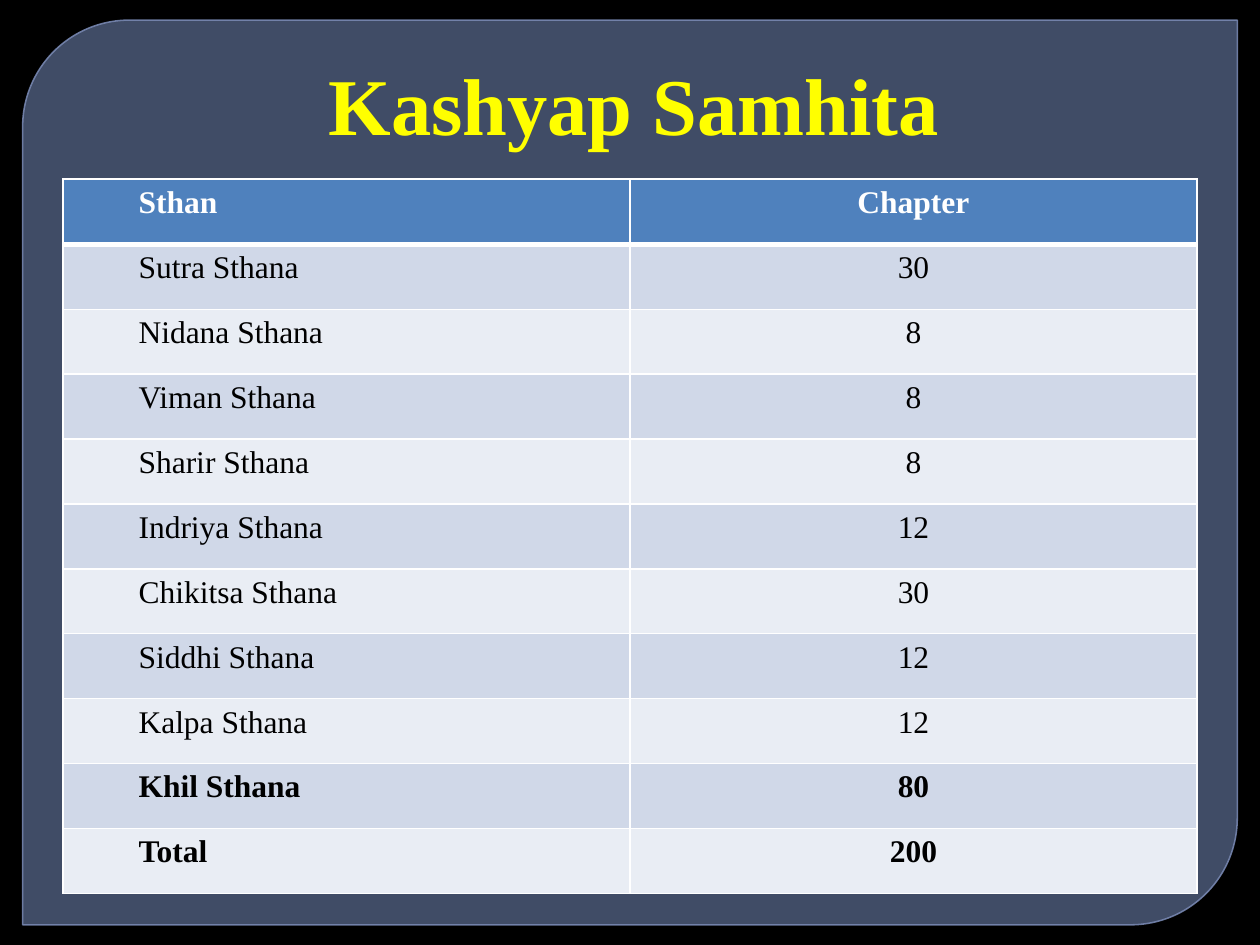
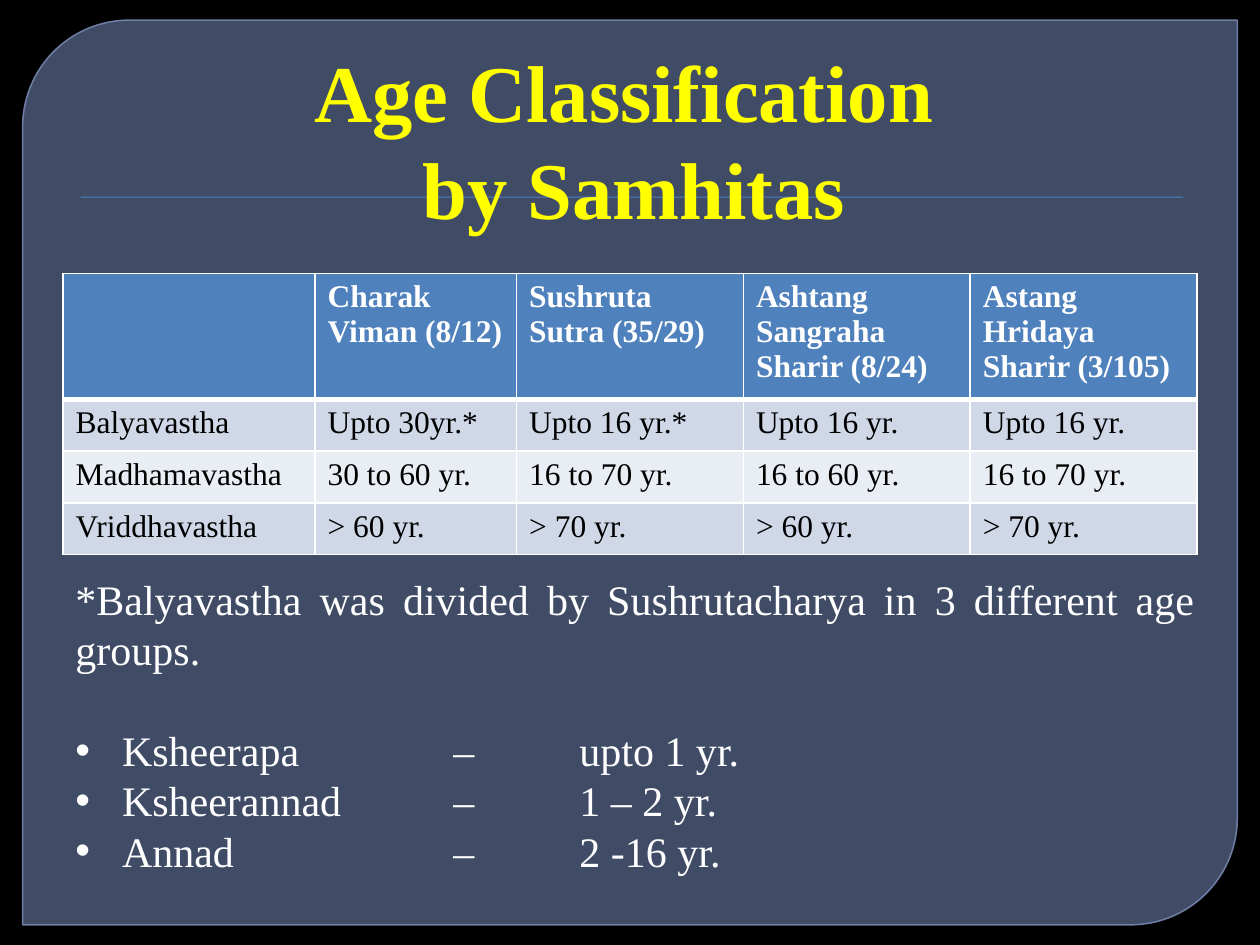
from lxml import etree
from pptx import Presentation
from pptx.dml.color import RGBColor
from pptx.enum.shapes import MSO_SHAPE
from pptx.enum.text import MSO_ANCHOR, PP_ALIGN
from pptx.oxml.ns import qn
from pptx.util import Inches, Pt

CENTER, LEFT, JUSTIFY = PP_ALIGN.CENTER, PP_ALIGN.LEFT, PP_ALIGN.JUSTIFY
TOP, BOTTOM = MSO_ANCHOR.TOP, MSO_ANCHOR.BOTTOM
PANEL_SHAPE, RULE_SHAPE = MSO_SHAPE.ROUND_2_DIAG_RECTANGLE, MSO_SHAPE.RECTANGLE

COLORS = {
    "background": "000000", "panel": "63759D", "panel_line": "7989B3",
    "accent": "4F81BD", "title": "FFFF00", "light": "FFFFFF", "dark": "000000",
    "odd_row": "D0D8E8", "even_row": "E9EDF4",
}
FONT = "Times New Roman"
TITLE_FONT = {"name": FONT, "size": Pt(46), "bold": True}
NOTE_FONT = {"name": FONT, "size": Pt(24), "bold": False}
MARGIN, CONTENT_WIDTH = 0.5, 9

CHAPTERS = {
    "title": "Kashyap Samhita", "title_height": 0.97,
    "top": 1.42, "columns": [4.5, 4.5], "header_height": 0.52, "row_height": 0.515,
    "alignments": [LEFT, CENTER], "first_indent": 0.5, "bold_rows": 2,
    "rows": [
        ("Sthan", "Chapter"),
        ("Sutra Sthana", "30"),
        ("Nidana Sthana", "8"),
        ("Viman Sthana", "8"),
        ("Sharir Sthana", "8"),
        ("Indriya Sthana", "12"),
        ("Chikitsa Sthana", "30"),
        ("Siddhi Sthana", "12"),
        ("Kalpa Sthana", "12"),
        ("Khil Sthana", "80"),
        ("Total", "200"),
    ],
}
AGES = {
    "title": "Age Classification \vby Samhitas", "title_height": 1.64,
    "top": 2.17, "columns": [2, 1.6, 1.8, 1.8, 1.8],
    "header_height": 0.93, "row_height": 0.41,
    "alignments": [LEFT] * 5, "first_indent": 0, "bold_rows": 0,
    "rows": [
        ("", "Charak Viman (8/12)", "Sushruta Sutra (35/29)",
         "Ashtang Sangraha Sharir (8/24)", "Astang Hridaya Sharir (3/105)"),
        ("Balyavastha", "Upto 30yr.*", "Upto 16 yr.*", "Upto 16 yr.", "Upto 16 yr."),
        ("Madhamavastha", "30 to 60 yr.", "16 to 70 yr.", "16 to 60 yr.", "16 to 70 yr."),
        ("Vriddhavastha", "> 60 yr.", "> 70 yr.", "> 60 yr.", "> 70 yr."),
    ],
}
NOTE = "*Balyavastha was divided by Sushrutacharya in 3 different age groups."
AGE_GROUPS = [
    ("Ksheerapa", "–", "upto 1 yr."),
    ("Ksheerannad", "–", "1 – 2 yr."),
    ("Annad", "–", "2 -16 yr."),
]
GROUP_TABS, GROUP_INDENT = [3, 4], 0.37


def rgb(name):
    return RGBColor.from_string(COLORS[name])


def fill_with(target, color):
    target.fill.solid()
    target.fill.fore_color.rgb = rgb(color)


def add_xml(parent, tag, **attributes):
    values = {key: str(value) for key, value in attributes.items()}
    return etree.SubElement(parent, qn(tag), values)


def set_opacity(properties, percent):
    color = properties.find(qn("a:solidFill")).find(qn("a:srgbClr"))
    add_xml(color, "a:alpha", val=percent * 1000)


def format_paragraph(paragraph, font, color, alignment, indent=0):
    paragraph.alignment = alignment
    if indent:
        paragraph._p.get_or_add_pPr().set("marL", str(Inches(indent)))
    for run in paragraph.runs:
        for attribute, value in font.items():
            setattr(run.font, attribute, value)
        run.font.color.rgb = rgb(color)


def add_text_frame(slide, top, width, height, anchor):
    box = slide.shapes.add_textbox(
        Inches(MARGIN), Inches(top), Inches(width), Inches(height))
    frame = box.text_frame
    frame.word_wrap = True
    frame.vertical_anchor = anchor
    return frame


def add_base_slide(presentation, content):
    """Add a slide with the dark panel, the rule, the title and the table."""
    slide = presentation.slides.add_slide(presentation.slide_layouts[6])
    fill_with(slide.background, "background")

    panel = slide.shapes.add_shape(
        PANEL_SHAPE, Inches(0.18), Inches(0.16), Inches(9.64), Inches(7.18))
    panel.adjustments[0], panel.adjustments[1] = 0.118, 0
    panel.shadow.inherit = False
    fill_with(panel, "panel")
    panel.line.color.rgb = rgb("panel_line")
    panel.line.width = Pt(0.87)
    set_opacity(panel._element.spPr, 65)
    set_opacity(panel.line._get_or_add_ln(), 88)

    rule = slide.shapes.add_shape(
        RULE_SHAPE, Inches(0.64), Inches(1.56), Inches(8.75), Inches(0.01))
    rule.shadow.inherit = False
    fill_with(rule, "accent")
    rule.line.fill.background()

    frame = add_text_frame(slide, 0.28, CONTENT_WIDTH, content["title_height"], BOTTOM)
    frame.text = content["title"]
    format_paragraph(frame.paragraphs[0], TITLE_FONT, "title", CENTER, 0.06)
    add_grid(slide, content)
    return slide


def set_borders(cell, row_index):
    header_edge = {0: "a:lnB", 1: "a:lnT"}.get(row_index)
    properties = cell._tc.get_or_add_tcPr()
    for position, side in enumerate(("a:lnL", "a:lnR", "a:lnT", "a:lnB")):
        border = etree.Element(qn(side), w=str(Pt(3 if side == header_edge else 1)))
        add_xml(add_xml(border, "a:solidFill"), "a:srgbClr", val=COLORS["light"])
        properties.insert(position, border)


def add_grid(slide, content):
    rows, columns = content["rows"], content["columns"]
    heights = [content["header_height"]] + [content["row_height"]] * (len(rows) - 1)
    table = slide.shapes.add_table(
        len(rows), len(columns), Inches(MARGIN), Inches(content["top"]),
        Inches(CONTENT_WIDTH), Inches(sum(heights))).table
    for column, width in zip(table.columns, columns):
        column.width = Inches(width)
    for row_index, (values, height) in enumerate(zip(rows, heights)):
        table.rows[row_index].height = Inches(height)
        header = row_index == 0
        fill = "accent" if header else ("even_row", "odd_row")[row_index % 2]
        bold = header or row_index >= len(rows) - content["bold_rows"]
        font = {"name": FONT, "size": Pt(18), "bold": bold}
        for column_index, value in enumerate(values):
            cell = table.cell(row_index, column_index)
            cell.text = value
            fill_with(cell, fill)
            set_borders(cell, row_index)
            format_paragraph(
                cell.text_frame.paragraphs[0], font, "light" if header else "dark",
                content["alignments"][column_index],
                0 if column_index else content["first_indent"])


def add_age_groups(slide):
    frame = add_text_frame(slide, 4.5, 9.08, 2.52, TOP)
    frame.text = NOTE
    format_paragraph(frame.paragraphs[0], NOTE_FONT, "light", JUSTIFY)
    frame.paragraphs[0].space_after = Pt(28.8)
    for group in AGE_GROUPS:
        paragraph = frame.add_paragraph()
        paragraph.text = "\t".join(group)
        format_paragraph(paragraph, NOTE_FONT, "light", LEFT, GROUP_INDENT)
        properties = paragraph._p.get_or_add_pPr()
        properties.set("indent", str(-Inches(GROUP_INDENT)))
        add_xml(properties, "a:buFont", typeface="Arial")
        add_xml(properties, "a:buChar", char="•")
        tabs = add_xml(properties, "a:tabLst")
        for position in GROUP_TABS:
            add_xml(tabs, "a:tab", pos=Inches(position), algn="l")


def main():
    presentation = Presentation()
    presentation.slide_width, presentation.slide_height = Inches(10), Inches(7.5)
    add_base_slide(presentation, CHAPTERS)
    add_age_groups(add_base_slide(presentation, AGES))
    presentation.save("out.pptx")


if __name__ == "__main__":
    main()
